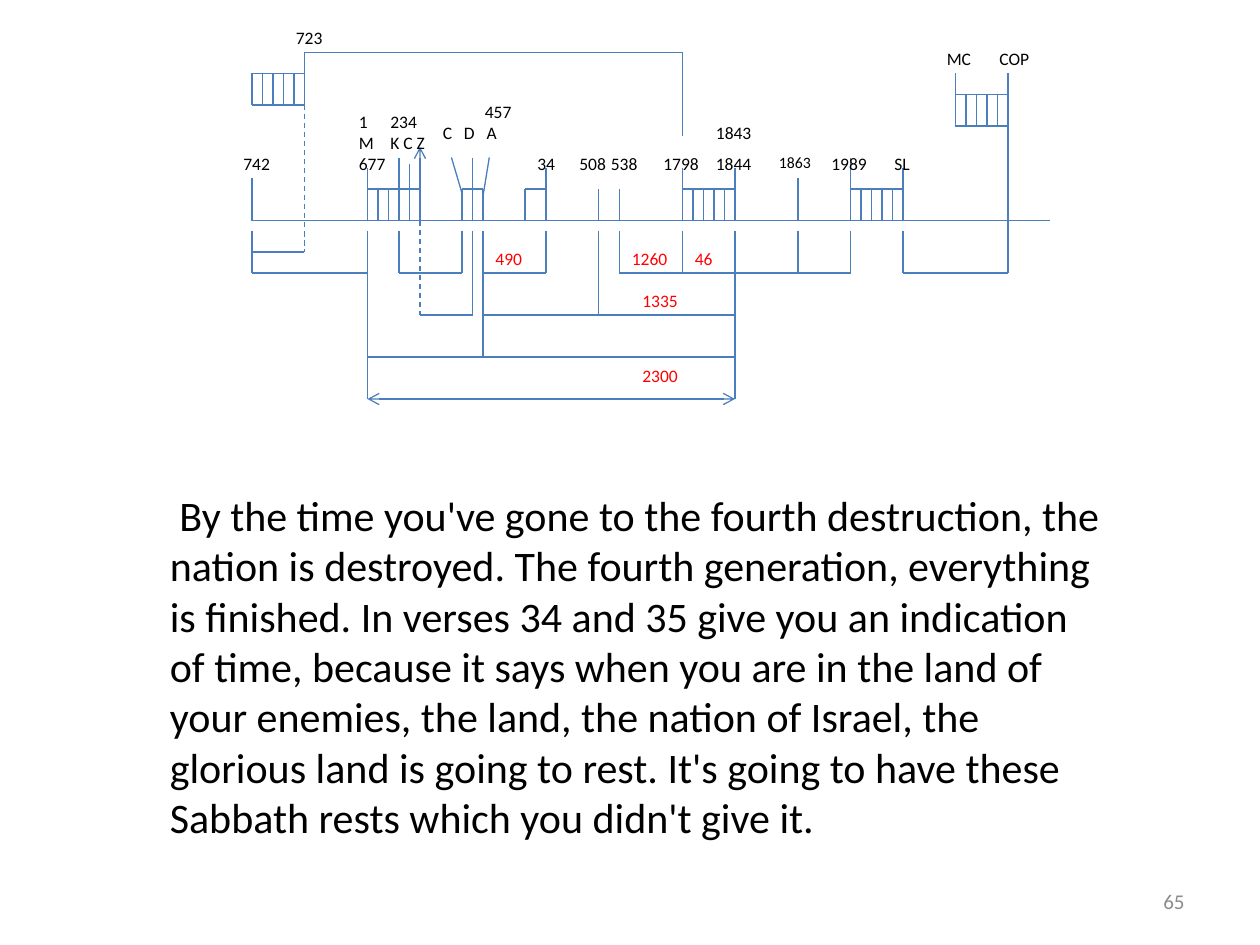
from lxml.etree import SubElement
from pptx import Presentation
from pptx.dml.color import RGBColor
from pptx.enum.dml import MSO_LINE
from pptx.enum.shapes import MSO_CONNECTOR
from pptx.enum.text import MSO_ANCHOR, MSO_AUTO_SIZE, PP_ALIGN
from pptx.oxml.ns import qn
from pptx.util import Pt

PX = 7620
BLUE = RGBColor(0x4B, 0x7E, 0xBC)
BLACK = RGBColor(0, 0, 0)
RED = RGBColor(0xFF, 0, 0)
GRAY = RGBColor(0x8C, 0x8C, 0x8C)

LABEL_HEIGHT = 32
RUNG_GAP, RUNGS, LADDER_HEIGHT = 10, 6, 30
AXIS, UPPER, LOWER, BRACKET = 210, 180, 220, 260

BODY = (
    " By the time you've gone to the fourth destruction, the nation is destroyed. "
    "The fourth generation, everything is finished. In verses 34 and 35 give you an "
    "indication of time, because it says when you are in the land of your enemies, "
    "the land, the nation of Israel, the glorious land is going to rest. It's going "
    "to have these Sabbath rests which you didn't give it."
)

LADDERS = [(240, 70), (910, 90), (350, UPPER), (650, UPPER), (810, UPPER)]

VERTICALS = [
    (240, 170, AXIS), (760, 170, AXIS),
    (290, 50, 70), (910, 70, 90), (960, 70, 90),
    (350, 160, UPPER), (520, 160, UPPER), (650, 160, UPPER),
    (700, 160, UPPER), (860, 160, UPPER), (810, 150, UPPER),
    (380, 150, 190), (390, 156, UPPER), (450, 150, 190),
    (650, 50, 130), (960, 120, BRACKET),
    (450, LOWER, 300), (570, LOWER, 300),
    (460, BRACKET, 340), (350, BRACKET, 380), (700, BRACKET, 380),
]
AXIS_TICKS = [440, 450, 460, 500, 520, 570, 590]
LOWER_TICKS = [240, 350, 380, 440, 460, 520, 590, 650, 700, 760, 810, 860]

HORIZONTALS = [
    (240, 1000, AXIS),
    (290, 650, 50),
    (440, 460, UPPER), (500, 520, UPPER),
    (240, 290, 240),
    (240, 350, BRACKET), (380, 440, BRACKET), (460, 520, BRACKET),
    (590, 810, BRACKET), (860, 960, BRACKET),
    (400, 450, 300), (460, 700, 300), (350, 700, 340),
]

LABELS = [
    ("723", 270, 20, 70), ("MC", 890, 40, 50), ("COP", 940, 40, 80),
    ("457", 450, 90, 70), ("1", 330, 100, 30), ("234", 360, 100, 90),
    ("C   D   A", 410, 110, 90), ("1843", 670, 110, 90),
    ("M", 330, 120, 40), ("K C Z", 360, 120, 70),
    ("742", 220, 140, 70), ("677", 330, 140, 60), ("34", 500, 140, 50),
    ("508", 540, 140, 70), ("538", 570, 140, 60), ("1798", 620, 140, 70),
    ("1844", 670, 140, 60), ("1989", 780, 140, 80), ("SL", 840, 140, 60),
]
SPANS = [
    ("490", 460, 230, 80), ("1260", 590, 230, 60), ("46", 650, 230, 80),
    ("1335", 600, 270, 60), ("2300", 600, 342, 70),
]


def add_line(slide, x1, y1, x2, y2, dashed=False, head=False, tail=False):
    connector = slide.shapes.add_connector(
        MSO_CONNECTOR.STRAIGHT, x1 * PX, y1 * PX, x2 * PX, y2 * PX)
    connector.line.color.rgb = BLUE
    connector.line.width = Pt(0.75)
    if dashed:
        connector.line.dash_style = MSO_LINE.DASH
    outline = connector.line._get_or_add_ln()
    for tag, wanted in (("a:headEnd", head), ("a:tailEnd", tail)):
        if wanted:
            SubElement(outline, qn(tag), type="arrow")
    SubElement(connector._element.spPr, qn("a:effectLst"))


def add_ladder(slide, left, top):
    bottom = top + LADDER_HEIGHT
    right = left + RUNG_GAP * (RUNGS - 1)
    for x in range(left, right + 1, RUNG_GAP):
        add_line(slide, x, top, x, bottom)
    for y in (top, bottom):
        add_line(slide, left, y, right, y)


def add_text(slide, text, left, top, width, height=LABEL_HEIGHT, size=10, color=BLACK):
    box = slide.shapes.add_textbox(left * PX, top * PX, width * PX, height * PX)
    frame = box.text_frame
    frame.word_wrap = True
    frame.auto_size = MSO_AUTO_SIZE.SHAPE_TO_FIT_TEXT
    paragraph = frame.paragraphs[0]
    paragraph.text = text
    paragraph.font.name = "Calibri"
    paragraph.font.size = Pt(size)
    paragraph.font.color.rgb = color
    return frame


def add_slide_number(slide):
    frame = add_text(slide, "65", 860, 834, 280, 48, 12, GRAY)
    frame.auto_size = MSO_AUTO_SIZE.NONE
    frame.vertical_anchor = MSO_ANCHOR.MIDDLE
    frame.paragraphs[0].alignment = PP_ALIGN.RIGHT


def add_timeline(slide):
    for left, top in LADDERS:
        add_ladder(slide, left, top)
    for x, top, bottom in VERTICALS:
        add_line(slide, x, top, x, bottom)
    for x in AXIS_TICKS:
        add_line(slide, x, UPPER, x, AXIS)
    for x in LOWER_TICKS:
        add_line(slide, x, LOWER, x, BRACKET)
    for left, right, y in HORIZONTALS:
        add_line(slide, left, y, right, y)
    add_line(slide, 430, 150, 440, 184)
    add_line(slide, 460, 187, 466, 150)
    add_line(slide, 290, 100, 290, 240, dashed=True)
    add_line(slide, 400, AXIS, 400, 300, dashed=True)
    add_line(slide, 400, UPPER, 400, 140, tail=True)
    add_line(slide, 350, 380, 700, 380, head=True, tail=True)


def main():
    presentation = Presentation()
    presentation.slide_width = 1200 * PX
    presentation.slide_height = 900 * PX
    slide = presentation.slides.add_slide(presentation.slide_layouts[6])
    add_text(slide, BODY, 150, 460, 910, 388, 24)
    add_timeline(slide)
    for text, left, top, width in LABELS:
        add_text(slide, text, left, top, width)
    add_text(slide, "1863", 730, 140, 80, 30, 9)
    for text, left, top, width in SPANS:
        add_text(slide, text, left, top, width, color=RED)
    add_slide_number(slide)
    presentation.save("out.pptx")


if __name__ == "__main__":
    main()
